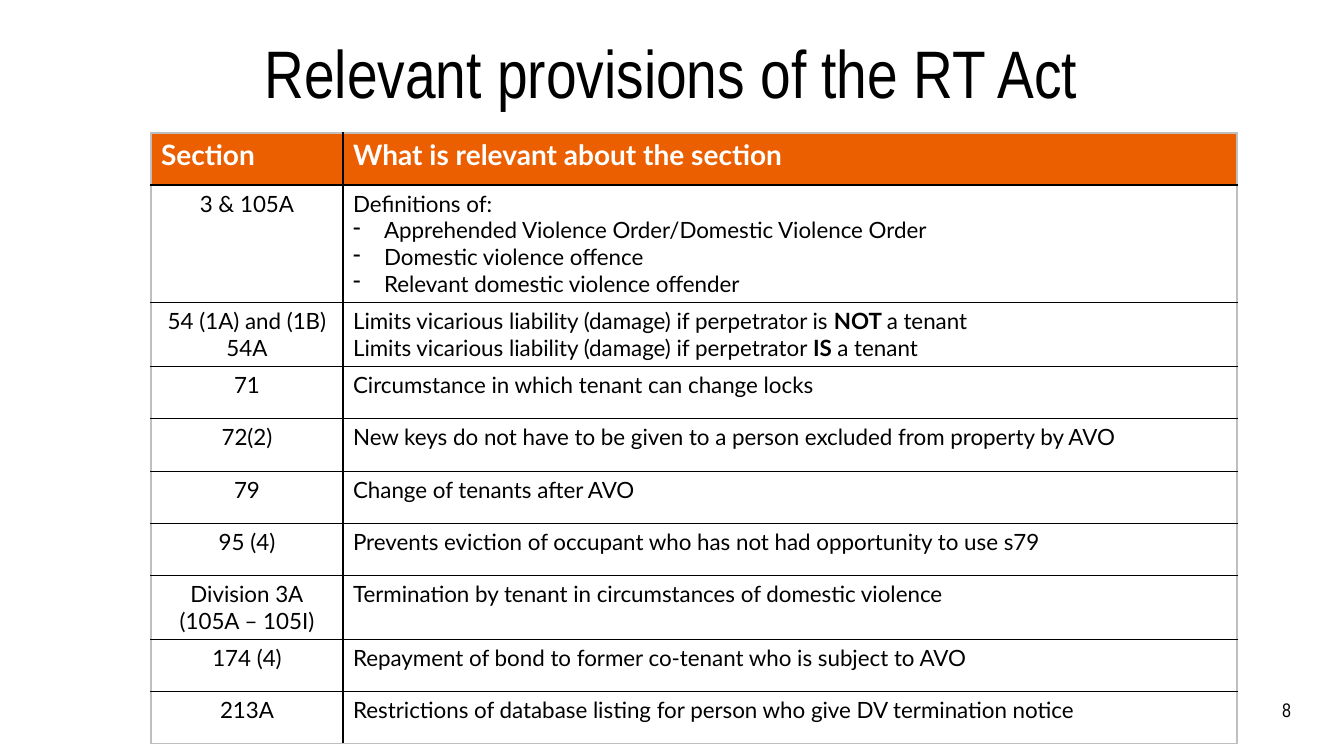
from lxml.etree import SubElement
from pptx import Presentation
from pptx.dml.color import RGBColor
from pptx.enum.text import MSO_ANCHOR, PP_ALIGN
from pptx.oxml.ns import qn
from pptx.util import Pt

PX = 914400 / 100.8
BLACK, WHITE, ORANGE, GREY = "000000", "FFFFFF", "EC5F00", "BFBFBF"

HEADINGS = ("Section", "What is relevant about the section")
# Section, relevance, row height; *...* marks bold, "- " a dash bullet
PROVISIONS = [
    ("3 & 105A", "Definitions of:\n- Apprehended Violence Order/Domestic Violence Order\n"
     "- Domestic violence offence\n- Relevant domestic violence offender", 117),
    ("54 (1A) and (1B)\n54A",
     "Limits vicarious liability (damage) if perpetrator is *NOT *a tenant\n"
     "Limits vicarious liability (damage) if perpetrator *IS *a tenant", 64),
    ("71", "Circumstance in which tenant can change locks", 52),
    ("72(2)", "New keys do not have to be given to a person excluded from property by AVO", 53),
    ("79", "Change of tenants after AVO", 52),
    ("95 (4)", "Prevents eviction of occupant who has not had opportunity to use s79", 52),
    ("Division 3A\v(105A – 105I)",
     "Termination by tenant in circumstances of domestic violence", 64),
    ("174 (4)", "Repayment of bond to former co-tenant who is subject to AVO", 52),
    ("213A", "Restrictions of database listing for person who give DV termination notice", 52),
]


def px(length):
    return round(length * PX)


def colour(value):
    return RGBColor.from_string(value)


def dash_bullet(paragraph, indent):
    properties = paragraph._p.get_or_add_pPr()
    properties.set("marL", str(px(indent)))
    properties.set("indent", str(-px(indent)))
    SubElement(properties, qn("a:buChar")).set("char", "-")


def write(frame, text, font="Lato", size=16, ink=BLACK, bold=False,
          align=PP_ALIGN.LEFT, spacing=None):
    for number, line in enumerate(text.split("\n")):
        paragraph = frame.add_paragraph() if number else frame.paragraphs[0]
        paragraph.alignment = align
        if spacing:
            paragraph.line_spacing = spacing
        if line.startswith("- "):
            dash_bullet(paragraph, 31)
            line = line[2:]
        for part_number, part in enumerate(line.split("*")):
            for piece_number, piece in enumerate(part.split("\v")):
                if piece_number:
                    paragraph.add_line_break()
                run = paragraph.add_run()
                run.text = piece
                run.font.name = font
                run.font.size = Pt(size)
                run.font.bold = bold or part_number % 2 == 1
                run.font.color.rgb = colour(ink)


def label(slide, box, text, anchor=MSO_ANCHOR.TOP, **format):
    frame = slide.shapes.add_textbox(*map(px, box)).text_frame
    frame.margin_left = frame.margin_right = frame.margin_top = frame.margin_bottom = 0
    frame.word_wrap = True
    frame.vertical_anchor = anchor
    write(frame, text, font="Arial Narrow", **format)


def draw_borders(cell, edges):
    for edge, ink in edges.items():
        line = SubElement(cell._tc.get_or_add_tcPr(), qn("a:" + edge))
        line.set("w", str(Pt(1)))
        fill = SubElement(line, qn("a:solidFill"))
        SubElement(fill, qn("a:srgbClr")).set("val", ink)


def provisions_table(slide, left, top, widths):
    rows = [(*HEADINGS, 52), *PROVISIONS]
    height = sum(row[2] for row in rows)
    box = (left, top, sum(widths), height)
    table = slide.shapes.add_table(len(rows), len(widths), *map(px, box)).table
    table.horz_banding = False
    for column, width in zip(table.columns, widths):
        column.width = px(width)
    for r, (*texts, row_height) in enumerate(rows):
        table.rows[r].height = px(row_height)
        for c, text in enumerate(texts):
            cell = table.cell(r, c)
            # Grey frame outside, black rules inside
            draw_borders(cell, {
                "lnL": BLACK if c else GREY,
                "lnR": GREY if c else BLACK,
                "lnT": BLACK if r else GREY,
                "lnB": BLACK if r < len(rows) - 1 else GREY,
            })
            if r == 0:
                cell.fill.solid()
                cell.fill.fore_color.rgb = colour(ORANGE)
                write(cell.text_frame, text, size=20, ink=WHITE, bold=True)
            else:
                cell.fill.background()
                write(cell.text_frame, text,
                      align=PP_ALIGN.LEFT if c else PP_ALIGN.CENTER)


def provisions_slide(deck):
    slide = deck.slides.add_slide(deck.slide_layouts[6])
    # Title
    label(slide, (52, 40, 1238, 74), "Relevant provisions of the RT Act",
          size=48, align=PP_ALIGN.CENTER, spacing=0.9)
    # Table of sections
    provisions_table(slide, 151, 133, (192, 894))
    # Page number
    label(slide, (1252, 697, 39, 24), "8", anchor=MSO_ANCHOR.BOTTOM,
          size=14, align=PP_ALIGN.RIGHT)


def main():
    deck = Presentation()
    deck.slide_width, deck.slide_height = px(1344), px(756)
    provisions_slide(deck)
    deck.save("out.pptx")


if __name__ == "__main__":
    main()
